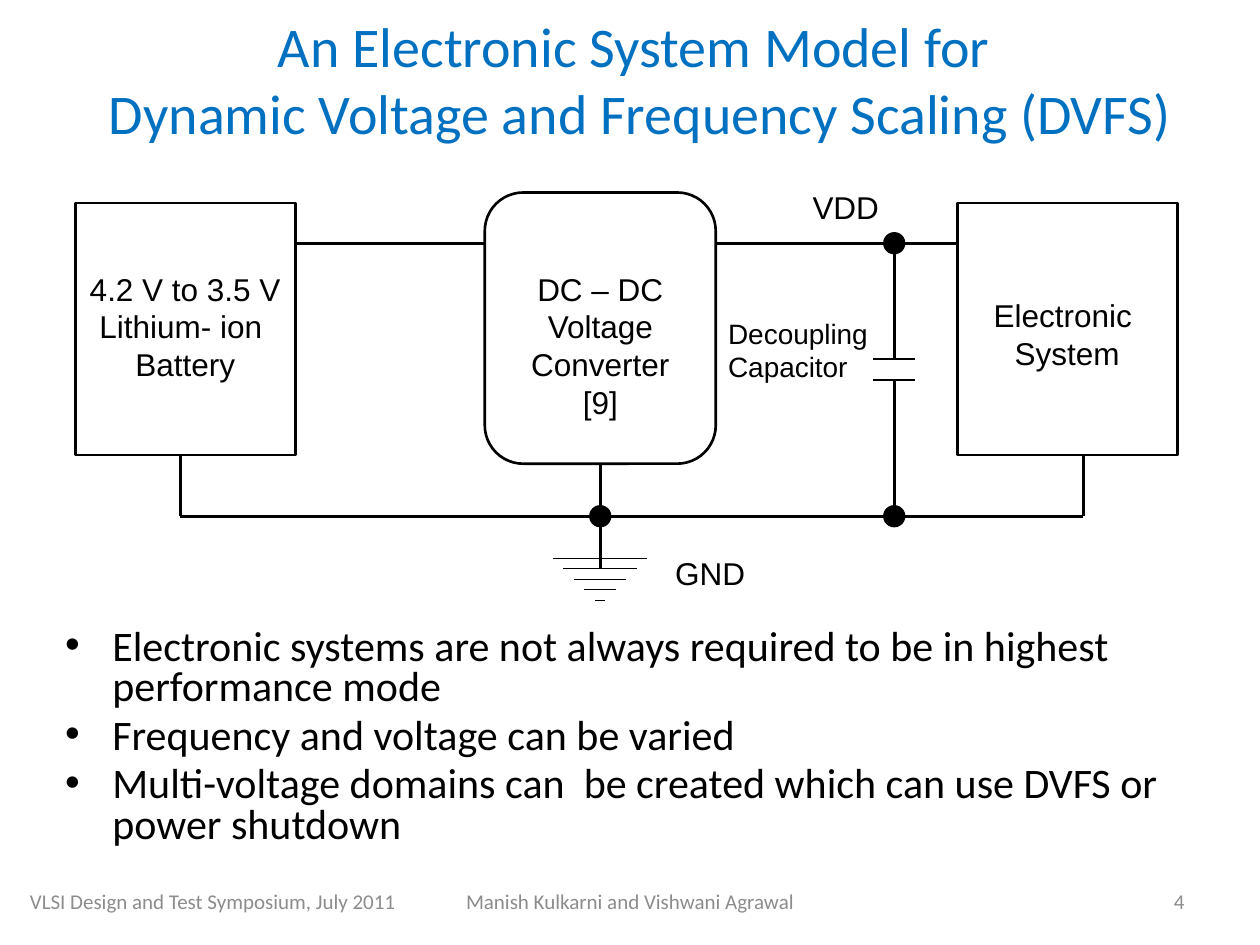
from lxml import etree
from pptx import Presentation
from pptx.dml.color import RGBColor
from pptx.enum.shapes import MSO_CONNECTOR, MSO_SHAPE
from pptx.enum.text import MSO_ANCHOR, MSO_AUTO_SIZE, PP_ALIGN
from pptx.oxml.ns import qn
from pptx.util import Pt

LEFT, MID, RIGHT = PP_ALIGN.LEFT, PP_ALIGN.CENTER, PP_ALIGN.RIGHT
TOP, CENTER = MSO_ANCHOR.TOP, MSO_ANCHOR.MIDDLE
FIXED = MSO_AUTO_SIZE.NONE
RECT, ROUND, OVAL = MSO_SHAPE.RECTANGLE, MSO_SHAPE.ROUNDED_RECTANGLE, MSO_SHAPE.OVAL
LINE = MSO_CONNECTOR.STRAIGHT
BOTTOM = 2

BLACK = RGBColor(0x00, 0x00, 0x00)
BLUE = RGBColor(0x00, 0x70, 0xC0)
GRAY = RGBColor(0x8C, 0x8C, 0x8C)


class Canvas:
    sans, head = "Arial", "Calibri"

    def __init__(self, deck):
        self.slide = deck.slides.add_slide(deck.slide_layouts[1])
        self.shapes = self.slide.shapes

    def style(self, frame, size, font, color, align, anchor):
        frame.word_wrap = True
        frame.auto_size = FIXED
        frame.vertical_anchor = anchor
        for para in frame.paragraphs:
            para.alignment = align
            for run in para.runs:
                run.font.size = Pt(size)
                run.font.name = font
                run.font.color.rgb = color

    def place(self, holder, x, y, w, h):
        holder.left, holder.top, holder.width, holder.height = Pt(x), Pt(y), Pt(w), Pt(h)

    def title(self, text, *area):
        holder = self.shapes.title
        self.place(holder, *area)
        holder.text_frame.text = text
        self.style(holder.text_frame, 32, self.head, BLUE, MID, CENTER)

    def list(self, items, *area):
        holder = self.slide.placeholders[1]
        self.place(holder, *area)
        frame = holder.text_frame
        frame.text = "\n".join(items)
        self.style(frame, 24, self.head, BLACK, LEFT, TOP)
        for para in frame.paragraphs:
            para.line_spacing = 0.8

    def text(self, text, x, y, w, h, size=18, font=sans, color=BLACK, align=LEFT, anchor=TOP):
        frame = self.shapes.add_textbox(Pt(x), Pt(y), Pt(w), Pt(h)).text_frame
        frame.text = text
        self.style(frame, size, font, color, align, anchor)

    def foot(self, text, x, w, align):
        self.text(text, x, 500.4, w, 28.8, 12, self.head, GRAY, align, CENTER)

    def box(self, kind, x, y, w, h, weight=1.5):
        shape = self.shapes.add_shape(kind, Pt(x), Pt(y), Pt(w), Pt(h))
        shape.shadow.inherit = False
        shape.fill.background()
        shape.line.color.rgb = BLACK
        shape.line.width = Pt(weight)
        return shape

    def dot(self, x, y, size=12):
        shape = self.box(OVAL, x - size / 2, y - size / 2, size, size, 0.75)
        shape.fill.solid()
        shape.fill.fore_color.rgb = BLACK

    def wire(self, x1, y1, x2, y2, weight=1.5):
        line = self.shapes.add_connector(LINE, Pt(x1), Pt(y1), Pt(x2), Pt(y2))
        line.line.color.rgb = BLACK
        line.line.width = Pt(weight)
        etree.SubElement(line._element.spPr, qn("a:effectLst"))
        return line

    def bar(self, x, y, half, weight):
        self.wire(x - half, y, x + half, y, weight)


def main():
    deck = Presentation()
    deck.slide_width, deck.slide_height = Pt(720), Pt(540)
    page = Canvas(deck)

    page.title("An Electronic System Model for \vDynamic Voltage and Frequency Scaling (DVFS)",
               12, 0, 708, 90)

    # Circuit blocks
    page.box(RECT, 43, 116, 126, 144)
    page.box(RECT, 547, 116, 126, 144)
    conv = page.box(ROUND, 277, 110, 132, 155)

    # Supply and ground rails
    supply, ground = 139, 295
    mid, cap = 343, 511
    page.wire(169, supply, 277, supply)
    page.wire(409, supply, 547, supply)
    page.wire(103, ground, 619, ground)
    for x in (103, 619):
        page.wire(x, 260, x, ground)
    page.wire(mid, 265, mid, ground).begin_connect(conv, BOTTOM)

    # Ground symbol
    page.wire(mid, ground, mid, 325)
    for i in range(5):
        page.bar(mid, 319 + 6 * i, 27 - 6 * i, 0.75)

    # Decoupling capacitor
    for rail, plate in ((supply, 205), (ground, 217)):
        page.wire(cap, rail, cap, plate)
        page.bar(cap, plate, 12, 1)

    # Junctions
    for x, y in ((mid, ground), (cap, ground), (cap, supply)):
        page.dot(x, y)

    # Labels
    page.text("4.2 V to 3.5 V Lithium- ion \nBattery", 18.7, 150.5, 174.2, 73, align=MID)
    page.text("DC – DC\nVoltage Converter [9]", 295, 150.5, 96, 94, align=MID)
    page.text("Electronic \nSystem", 558.7, 165.6, 102.2, 51, align=MID)
    page.text("Decoupling Capacitor", 409, 177.1, 108, 46, size=16)
    page.text("VDD", 457.2, 103.7, 60, 29)
    page.text("GND", 378.7, 313.2, 60, 29)

    page.list(["Electronic systems are not always required to be in highest performance mode",
               "Frequency and voltage can be varied",
               "Multi-voltage domains can  be created which can use DVFS or power shutdown"],
              30, 355.7, 690, 139)

    # Footer
    page.foot("VLSI Design and Test Symposium, July 2011", 10, 235, LEFT)
    page.foot("Manish Kulkarni and Vishwani Agrawal", 254, 212, MID)
    page.foot("4", 516, 168, RIGHT)

    deck.save("out.pptx")


if __name__ == "__main__":
    main()
